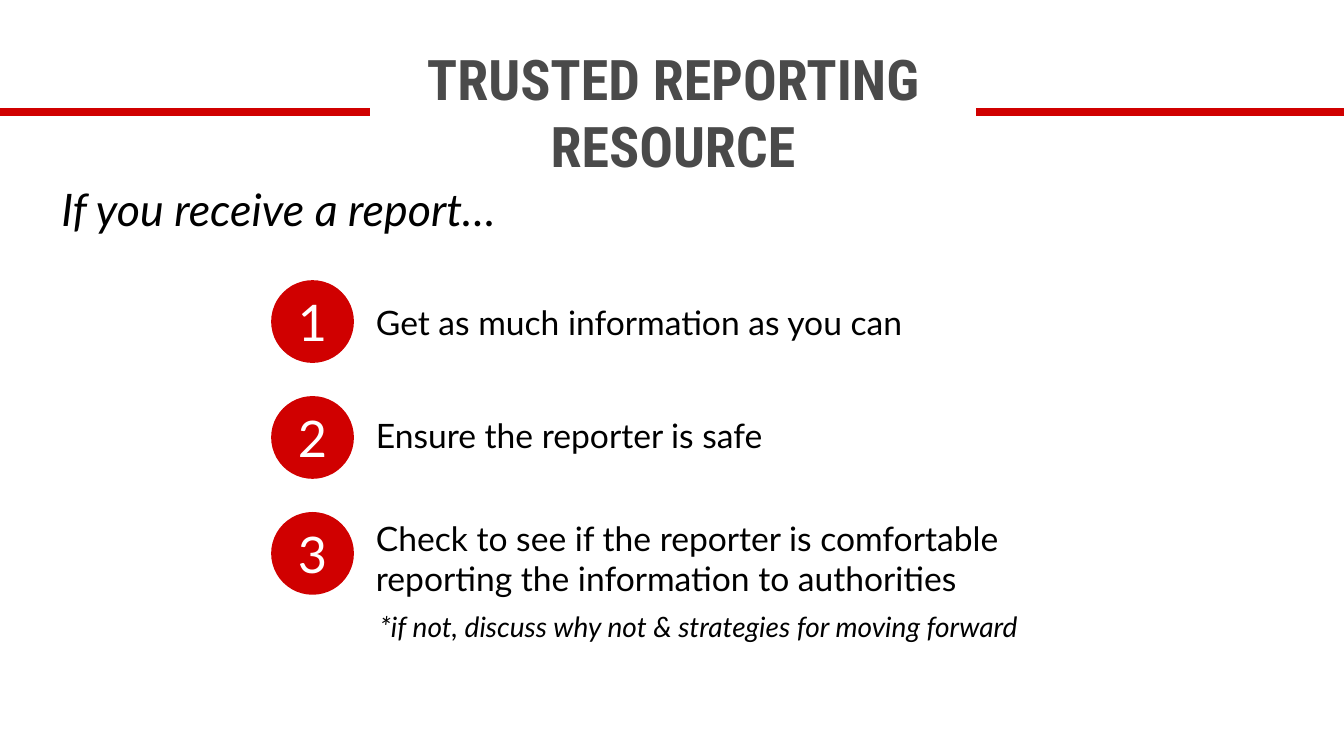
from dataclasses import dataclass

from lxml.etree import SubElement
from pptx import Presentation
from pptx.dml.color import RGBColor
from pptx.enum.shapes import MSO_CONNECTOR, MSO_SHAPE
from pptx.enum.text import MSO_ANCHOR, PP_ALIGN
from pptx.oxml.ns import qn
from pptx.shapes.autoshape import Shape
from pptx.slide import Slide
from pptx.util import Emu, Pt

SCALE = 9144
WIDTH, HEIGHT = 1333, 750
RED, GRAY, BLACK, WHITE = "D00000", "4A4A4A", "000000", "FFFFFF"


@dataclass(frozen=True)
class Box:
    left: int
    top: int
    width: int
    height: int


@dataclass(frozen=True)
class Style:
    size: int
    color: str = BLACK
    font: str = "Lato"
    bold: bool = False
    italic: bool = False


@dataclass(frozen=True)
class Label:
    box: Box
    text: str
    style: Style


TITLE = Style(40, GRAY, "Roboto Condensed", bold=True)
LEAD = Style(32, italic=True)
NOTE = Style(20, italic=True)
BODY = Style(24)
DIGIT = Style(36, WHITE)

LABELS = [
    Label(Box(51, 175, 600, 64), "If you receive a report…", LEAD),
    Label(Box(367, 600, 697, 44),
          "*if not, discuss why not & strategies for moving forward", NOTE),
]
STEPS = [
    Label(Box(363, 295, 701, 50), "Get as much information as you can", BODY),
    Label(Box(363, 407, 602, 50), "Ensure the reporter is safe", BODY),
    Label(Box(363, 509, 649, 91),
          "Check to see if the reporter is comfortable "
          "reporting the information to authorities", BODY),
]
DISC_LEFT, DISC_TOP, DISC_SIZE, DISC_STEP = 270, 279, 80, 115


def px(count: int) -> Emu:
    return Emu(count * SCALE)


def rgb(code: str) -> RGBColor:
    return RGBColor.from_string(code)


def place(box: Box) -> tuple[Emu, Emu, Emu, Emu]:
    return px(box.left), px(box.top), px(box.width), px(box.height)


def write(shape: Shape, text: str, style: Style, align: PP_ALIGN) -> None:
    frame = shape.text_frame
    frame.word_wrap = True
    line = frame.paragraphs[0]
    line.alignment = align
    run = line.add_run()
    run.text = text
    font = run.font
    font.name = style.font
    font.size = Pt(style.size)
    font.bold = style.bold
    font.italic = style.italic
    font.color.rgb = rgb(style.color)


def add_label(slide: Slide, label: Label) -> None:
    shape = slide.shapes.add_textbox(*place(label.box))
    write(shape, label.text, label.style, PP_ALIGN.LEFT)


def add_block(slide: Slide, kind: MSO_SHAPE, label: Label, fill: str,
              edge: float = 0) -> None:
    shape = slide.shapes.add_shape(kind, *place(label.box))
    shape.shadow.inherit = False
    shape.fill.solid()
    shape.fill.fore_color.rgb = rgb(fill)
    if edge:
        shape.line.color.rgb = rgb(fill)
        shape.line.width = Pt(edge)
    else:
        shape.line.fill.background()
    shape.text_frame.vertical_anchor = MSO_ANCHOR.MIDDLE
    write(shape, label.text, label.style, PP_ALIGN.CENTER)


def add_rule(slide: Slide, top: int) -> None:
    rule = slide.shapes.add_connector(
        MSO_CONNECTOR.STRAIGHT, px(0), px(top), px(WIDTH), px(top))
    rule.line.color.rgb = rgb(RED)
    rule.line.width = Pt(6)
    SubElement(rule._element.spPr, qn("a:effectLst"))


def main() -> None:
    deck = Presentation()
    deck.slide_width, deck.slide_height = px(WIDTH), px(HEIGHT)
    slide = deck.slides.add_slide(deck.slide_layouts[6])

    add_rule(slide, 111)
    title = Label(Box(367, 43, 601, 136), "TRUSTED REPORTING RESOURCE", TITLE)
    add_block(slide, MSO_SHAPE.RECTANGLE, title, WHITE)
    for label in LABELS:
        add_label(slide, label)
    for row, step in enumerate(STEPS):
        box = Box(DISC_LEFT, DISC_TOP + row * DISC_STEP, DISC_SIZE, DISC_SIZE)
        disc = Label(box, str(row + 1), DIGIT)
        add_block(slide, MSO_SHAPE.OVAL, disc, RED, 1.5)
        add_label(slide, step)

    deck.save("out.pptx")


if __name__ == "__main__":
    main()
